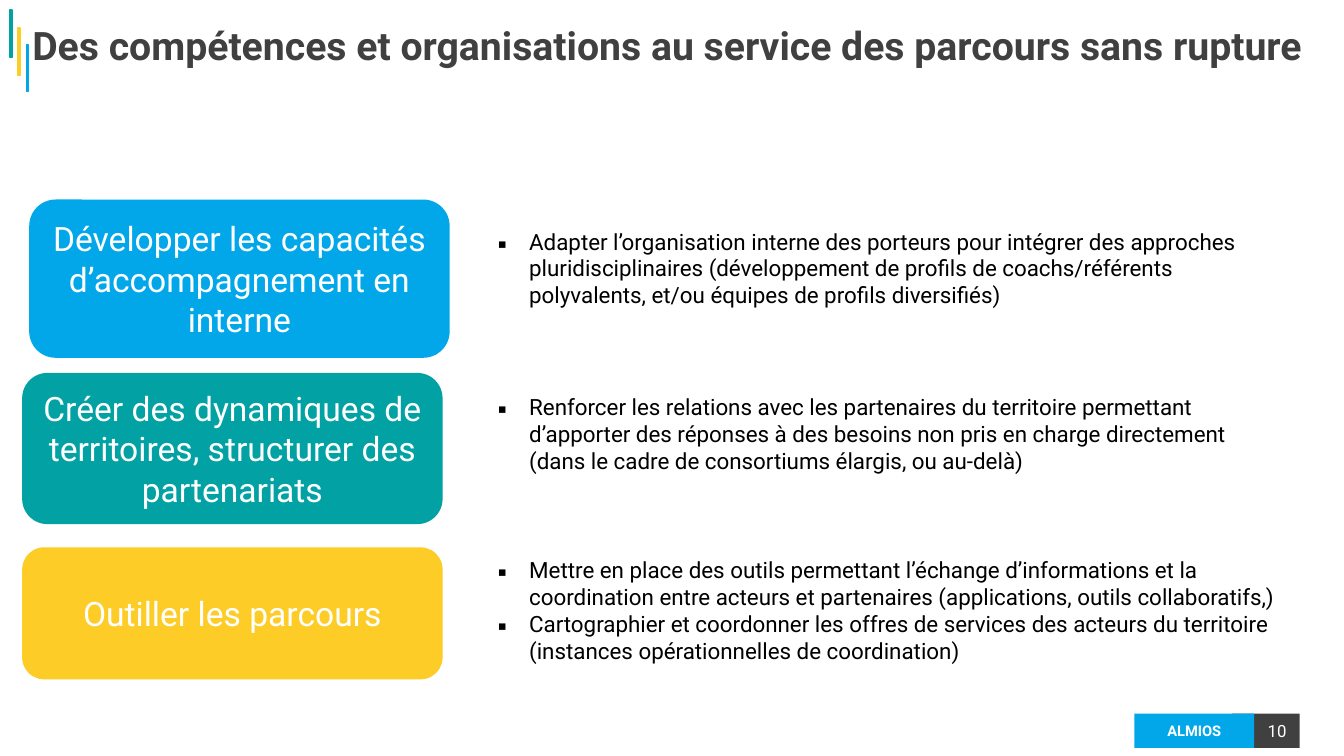
"""Build the slide on skills and organisations serving seamless pathways."""
from lxml.etree import SubElement
from pptx import Presentation
from pptx.dml.color import RGBColor
from pptx.enum.shapes import MSO_SHAPE as Preset
from pptx.enum.text import MSO_ANCHOR as Anchor, PP_ALIGN as Align
from pptx.oxml.ns import qn
from pptx.util import Inches, Pt

FONT = "Roboto"
BLUE, TEAL, YELLOW = "02A7EA", "02A1A4", "FDCC27"
DARK, WHITE, BLACK = "404040", "FFFFFF", "000000"

TITLE = "Des compétences et organisations au service des parcours sans rupture"
COMPANY, PAGE_NUMBER = "ALMIOS", "10"
ACCENT_BARS = [(0.1, 0.1, TEAL), (0.18, 0.28, YELLOW), (0.26, 0.44, BLUE)]
THEMES = [
    {
        "heading": "Développer les capacités d’accompagnement en interne",
        "color": BLUE, "box": (0.29, 1.98, 4.17, 1.57), "text_top": 2.21,
        "points": ["Adapter l’organisation interne des porteurs pour intégrer des approches "
                   "pluridisciplinaires (développement de profils de coachs/référents "
                   "polyvalents, et/ou équipes de profils diversifiés)"],
    },
    {
        "heading": "Créer des dynamiques de territoires, structurer des partenariats",
        "color": TEAL, "box": (0.22, 3.7, 4.17, 1.5), "text_top": 3.85,
        "points": ["Renforcer les relations avec les partenaires du territoire permettant "
                   "d’apporter des réponses à des besoins non pris en charge directement "
                   "(dans le cadre de consortiums élargis, ou au-delà)"],
    },
    {
        "heading": "Outiller les parcours",
        "color": YELLOW, "box": (0.22, 5.43, 4.17, 1.31), "text_top": 5.47,
        "points": ["Mettre en place des outils permettant l’échange d’informations et la "
                   "coordination entre acteurs et partenaires (applications, outils "
                   "collaboratifs,)",
                   "Cartographier et coordonner les offres de services des acteurs du "
                   "territoire (instances opérationnelles de coordination)"],
    },
]
POINTS_LEFT, POINTS_WIDTH = 4.84, 7.95
LINE_HEIGHT, POINT_CHARS = 0.27, 72
WIDE_INSETS, NORMAL_INSETS = (0.13, 0.07), (0.1, 0.05)


def rgb(color):
    return RGBColor.from_string(color)


def add_bullet(paragraph, indent=0.31):
    properties = paragraph._p.get_or_add_pPr()
    properties.set("marL", str(Inches(indent)))
    properties.set("indent", str(-Inches(indent)))
    SubElement(properties, qn("a:buFont"), typeface="Noto Sans Symbols")
    SubElement(properties, qn("a:buChar"), char="▪")


def write(shape, *texts, size, color, bold=False, align=Align.LEFT,
          anchor=Anchor.MIDDLE, insets=NORMAL_INSETS, bullets=False):
    frame = shape.text_frame
    frame.word_wrap = True
    frame.vertical_anchor = anchor
    frame.margin_left = frame.margin_right = Inches(insets[0])
    frame.margin_top = frame.margin_bottom = Inches(insets[1])
    for index, text in enumerate(texts):
        paragraph = frame.add_paragraph() if index else frame.paragraphs[0]
        paragraph.alignment = align
        if bullets:
            add_bullet(paragraph)
        run = paragraph.add_run()
        run.text = text
        run.font.name, run.font.size, run.font.bold = FONT, Pt(size), bold
        run.font.color.rgb = rgb(color)


def add_box(slide, preset, bounds, color):
    shape = slide.shapes.add_shape(preset, *map(Inches, bounds))
    shape.shadow.inherit = False
    shape.fill.solid()
    shape.fill.fore_color.rgb = rgb(color)
    shape.line.fill.background()
    return shape


def add_accent_bar(slide, left, top, color):
    bar = add_box(slide, Preset.RECTANGLE, (left, top, 0.02, 0.47), color)
    fill_color = bar._element.spPr.find(qn("a:solidFill"))[0]
    SubElement(fill_color, qn("a:alpha"), val="75000")
    bar.line.color.rgb = rgb(color)
    bar.line.width = Pt(1)


def add_text(slide, bounds, *texts, **text_format):
    write(slide.shapes.add_textbox(*map(Inches, bounds)), *texts, **text_format)


def add_theme(slide, theme):
    box = add_box(slide, Preset.ROUNDED_RECTANGLE, theme["box"], theme["color"])
    write(box, theme["heading"], size=24, color=WHITE, align=Align.CENTER)
    lines = sum(-(-len(point) // POINT_CHARS) for point in theme["points"])
    height = lines * LINE_HEIGHT + 2 * NORMAL_INSETS[1]
    add_text(slide, (POINTS_LEFT, theme["text_top"], POINTS_WIDTH, height),
             *theme["points"], size=16, color=BLACK, anchor=Anchor.TOP, bullets=True)


def main():
    presentation = Presentation()
    presentation.slide_width, presentation.slide_height = Inches(13.33), Inches(7.5)
    slide = presentation.slides.add_slide(presentation.slide_layouts[6])

    page_box = add_box(slide, Preset.RECTANGLE, (12.22, 7.08, 0.67, 0.34), DARK)
    write(page_box, PAGE_NUMBER, size=12, color=WHITE, align=Align.RIGHT,
          anchor=Anchor.TOP, insets=WIDE_INSETS)
    company_box = add_box(slide, Preset.RECTANGLE, (11.25, 7.08, 1.19, 0.34), BLUE)
    write(company_box, COMPANY, size=10.5, color=WHITE, bold=True,
          align=Align.CENTER, insets=WIDE_INSETS)
    for bar in ACCENT_BARS:
        add_accent_bar(slide, *bar)
    add_text(slide, (0.19, 0.15, 12.95, 0.6), TITLE, size=28, color=DARK,
             bold=True, insets=WIDE_INSETS)
    for theme in THEMES:
        add_theme(slide, theme)
    presentation.save("out.pptx")


if __name__ == "__main__":
    main()
